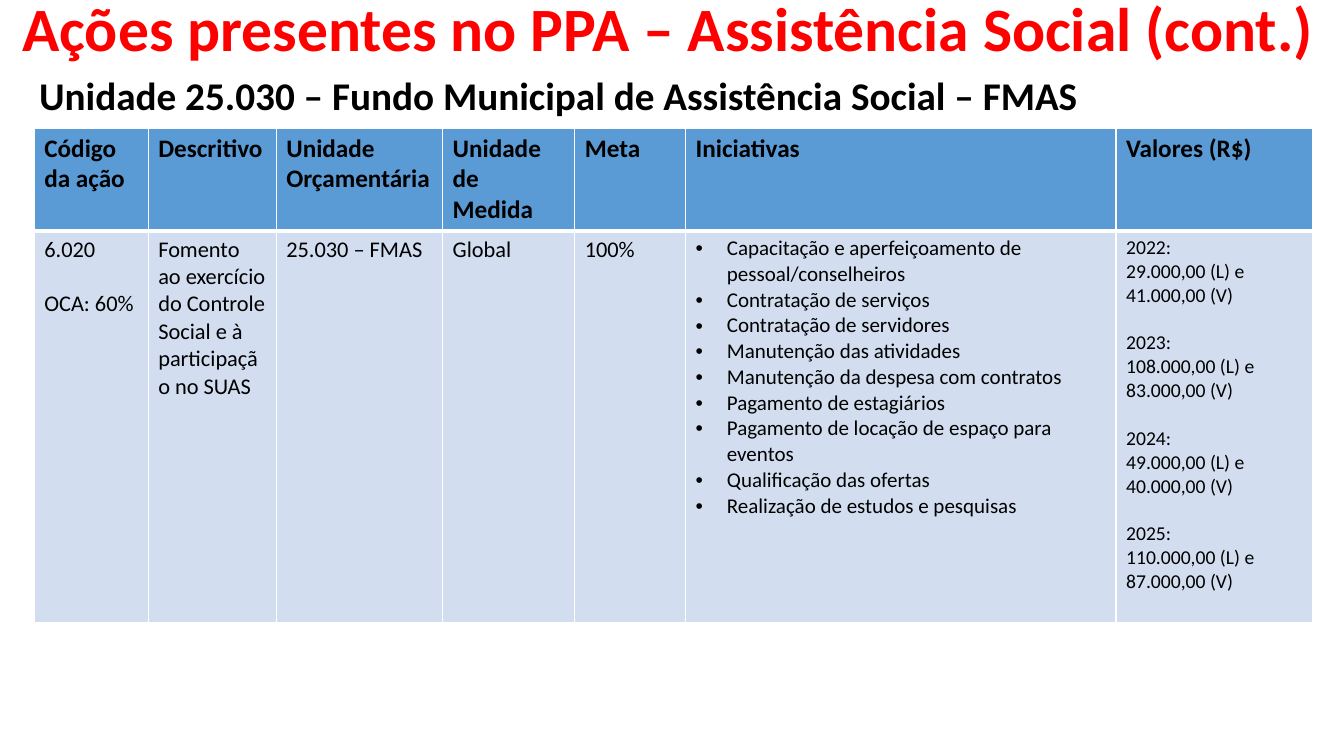
from dataclasses import dataclass

from lxml import etree
from pptx import Presentation
from pptx.dml.color import RGBColor
from pptx.enum import text as txt
from pptx.oxml import ns
from pptx.util import Inches, Pt


@dataclass(frozen=True)
class Theme:
    font: str = "Calibri"
    red: str = "FF0000"
    black: str = "000000"
    white: str = "FFFFFF"
    blue: str = "5B9BD5"
    pale: str = "D2DEEF"
    title: int = 44
    sub: int = 28
    head: int = 18
    body: int = 16
    item: int = 15
    value: int = 14


@dataclass(frozen=True)
class Column:
    """One table column; each group of lines is set off by a gap."""
    name: str
    width: float
    groups: list[list[str]]
    size: int
    bullet: bool = False


THEME = Theme()
VALUES = [
    ("2022", "29.000,00", "41.000,00"),
    ("2023", "108.000,00", "83.000,00"),
    ("2024", "49.000,00", "40.000,00"),
    ("2025", "110.000,00", "87.000,00"),
]
ITEMS = [
    "Capacitação e aperfeiçoamento de pessoal/conselheiros",
    "Contratação de serviços",
    "Contratação de servidores",
    "Manutenção das atividades",
    "Manutenção da despesa com contratos",
    "Pagamento de estagiários",
    "Pagamento de locação de espaço para eventos",
    "Qualificação das ofertas",
    "Realização de estudos e pesquisas",
]
COLUMNS = [
    Column("Código da ação", 1.13, [["6.020"], ["OCA: 60%"]], THEME.body),
    Column("Descritivo", 1.27,
           [["Fomento ao exercício do Controle Social e à participação no SUAS"]],
           THEME.body),
    Column("Unidade Orçamentária", 1.65, [["25.030 – FMAS"]], THEME.body),
    Column("Unidade de Medida", 1.31, [["Global"]], THEME.body),
    Column("Meta", 1.1, [["100%"]], THEME.body),
    Column("Iniciativas", 4.27, [ITEMS], THEME.item, bullet=True),
    Column("Valores (R$)", 1.95,
           [[f"{year}:", f"{low} (L) e {high} (V)"] for year, low, high in VALUES],
           THEME.value),
]
HEIGHTS = [1.02, 3.89]


def write(frame, groups: list[list[str]], *, size: int, color: str = THEME.black,
          bold: bool = False, bullet: bool = False, spacing: float = 1.0) -> None:
    """Write the groups as paragraphs, with one line of space between groups."""
    lines = [(line, g > 0 and n == 0)
             for g, group in enumerate(groups) for n, line in enumerate(group)]
    for i, (line, gap) in enumerate(lines):
        para = frame.add_paragraph() if i else frame.paragraphs[0]
        para.alignment = txt.PP_ALIGN.LEFT
        para.line_spacing = spacing
        para.space_before = Pt(size * 1.22 if gap else 0)
        run = para.add_run()
        run.text = line
        font = run.font
        font.name, font.size, font.bold = THEME.font, Pt(size), bold
        font.color.rgb = RGBColor.from_string(color)
        if bullet:
            props = para._p.get_or_add_pPr()
            props.set("marL", str(Inches(0.31)))
            props.set("indent", str(-Inches(0.31)))
            face = etree.SubElement(props, ns.qn("a:buFont"))
            face.set("typeface", "Arial")
            etree.SubElement(props, ns.qn("a:buChar")).set("char", "•")


def paint(cell, color: str, top: int, bottom: int) -> None:
    """Fill a cell and rule its sides in white, widths in points."""
    props = cell._tc.get_or_add_tcPr()
    for side, width in {"L": 1, "R": 1, "T": top, "B": bottom}.items():
        line = etree.SubElement(props, ns.qn(f"a:ln{side}"))
        line.set("w", str(Pt(width)))
        fill = etree.SubElement(line, ns.qn("a:solidFill"))
        etree.SubElement(fill, ns.qn("a:srgbClr")).set("val", THEME.white)
    cell.fill.solid()
    cell.fill.fore_color.rgb = RGBColor.from_string(color)


def add_title(slide) -> None:
    title = slide.shapes.title
    title.left, title.top = Inches(0.12), Inches(-0.15)
    title.width, title.height = Inches(13.16), Inches(0.92)
    frame = title.text_frame
    frame.auto_size = txt.MSO_AUTO_SIZE.NONE
    frame.vertical_anchor = txt.MSO_ANCHOR.MIDDLE
    write(frame, [["Ações presentes no PPA – Assistência Social (cont.)"]],
          size=THEME.title, color=THEME.red, bold=True, spacing=0.9)


def add_unit(slide) -> None:
    box = slide.shapes.add_textbox(Inches(0.29), Inches(0.66),
                                   Inches(10.63), Inches(0.57))
    frame = box.text_frame
    frame.word_wrap = False
    frame.auto_size = txt.MSO_AUTO_SIZE.SHAPE_TO_FIT_TEXT
    write(frame, [["Unidade 25.030 – Fundo Municipal de Assistência Social – FMAS"]],
          size=THEME.sub, bold=True)


def add_actions(slide) -> None:
    width = sum(col.width for col in COLUMNS)
    table = slide.shapes.add_table(
        len(HEIGHTS), len(COLUMNS), Inches(0.34), Inches(1.27),
        Inches(width), Inches(sum(HEIGHTS))).table
    for row, height in zip(table.rows, HEIGHTS):
        row.height = Inches(height)
    for i, col in enumerate(COLUMNS):
        table.columns[i].width = Inches(col.width)
        head, body = table.cell(0, i), table.cell(1, i)
        paint(head, THEME.blue, top=1, bottom=3)
        paint(body, THEME.pale, top=3, bottom=1)
        write(head.text_frame, [[col.name]], size=THEME.head, bold=True)
        write(body.text_frame, col.groups, size=col.size, bullet=col.bullet)


def main() -> None:
    deck = Presentation()
    deck.slide_width, deck.slide_height = Inches(13.33), Inches(7.5)
    slide = deck.slides.add_slide(deck.slide_layouts[5])
    add_title(slide)
    add_actions(slide)
    add_unit(slide)
    deck.save("out.pptx")


if __name__ == "__main__":
    main()
